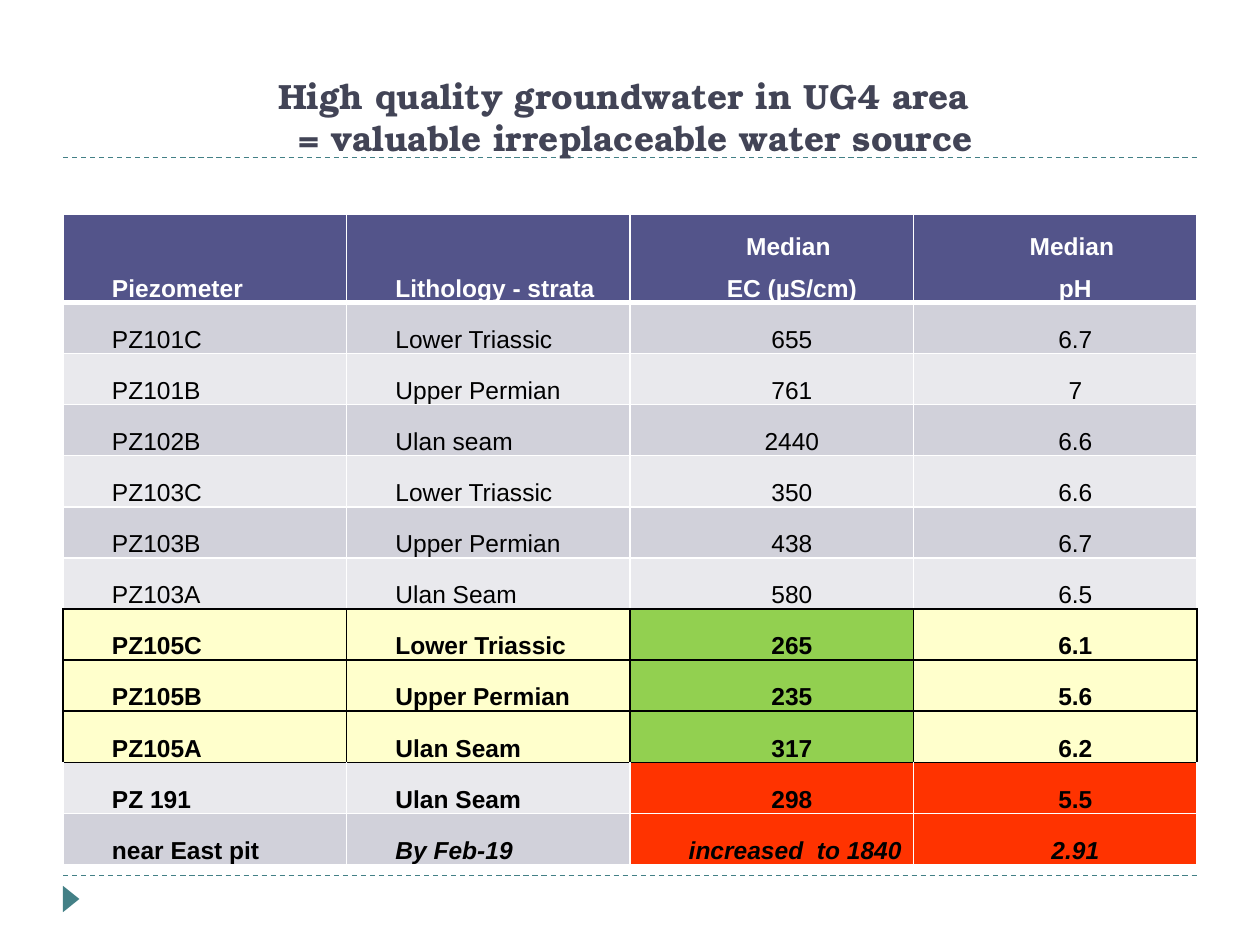
from pptx import Presentation
from pptx.dml.color import RGBColor as RGB
from pptx.enum.dml import MSO_LINE
from pptx.enum.shapes import MSO_CONNECTOR as CONN, MSO_SHAPE as SHAPE
from pptx.enum.text import MSO_ANCHOR as ANCHOR, PP_ALIGN as ALIGN
from pptx.oxml.ns import qn
from pptx.util import Pt
from lxml.etree import SubElement

TITLE = "High quality groundwater in UG4 area \v = valuable irreplaceable water source"
ROWS = [
    ("header", "Piezometer", "Lithology - strata", "Median \nEC (µS/cm)", "Median \npH"),
    ("plain", "PZ101C", "Lower Triassic", "655", "6.7"),
    ("plain", "PZ101B", "Upper Permian", "761", "7"),
    ("plain", "PZ102B", "Ulan seam", "2440", "6.6"),
    ("plain", "PZ103C", "Lower Triassic", "350", "6.6"),
    ("plain", "PZ103B", "Upper Permian", "438", "6.7"),
    ("plain", "PZ103A", "Ulan Seam", "580", "6.5"),
    ("fresh", "PZ105C", "Lower Triassic", "265", "6.1"),
    ("fresh", "PZ105B", "Upper Permian", "235", "5.6"),
    ("fresh", "PZ105A", "Ulan Seam", "317", "6.2"),
    ("alert", "PZ 191", "Ulan Seam", "298", "5.5"),
    ("alert", "near East pit", "By Feb-19", " increased  to 1840", "2.91"),
]
THEME = {
    "accent": "438086", "title": "424456", "white": "FFFFFF", "black": "000000",
    "header": "53548A", "bands": ("E9E9ED", "D1D1DA"), "yellow": "FFFFCC",
    "green": ("92D050", 50), "red": ("FF3300", 54),
    "title_font": "TeX Gyre Bonum", "body_font": "Arial",
    "title_size": 20, "body_size": 14,
}
LEFT, WIDTH = 36, 648
TABLE_TOP, ROW_H, INDENT = 122.4, 29.2, 23
RULES = (500.4, 90)


def set_all(target, values):
    for name, value in values.items():
        setattr(target, name, value)


def style_runs(p, color, **values):
    for r in p.runs:
        set_all(r.font, values)
        r.font.color.rgb = RGB.from_string(color)


def set_fill(cell, color):
    hex_color, alpha = color if isinstance(color, tuple) else (color, 100)
    cell.fill.solid()
    cell.fill.fore_color.rgb = RGB.from_string(hex_color)
    if alpha < 100:
        clr = cell.fill._xPr.find(".//" + qn("a:srgbClr"))
        SubElement(clr, qn("a:alpha"), val=str(alpha * 1000))


def set_border(cell, side, color, width):
    ln = SubElement(cell._tc.get_or_add_tcPr(), qn("a:ln" + side), w=str(Pt(width)))
    SubElement(SubElement(ln, qn("a:solidFill")), qn("a:srgbClr"), val=color)


def cell_fill(kind, row, col):
    if kind == "header":
        return THEME["header"]
    if kind == "fresh":
        return THEME["green"] if col == 2 else THEME["yellow"]
    if kind == "alert" and col >= 2:
        return THEME["red"]
    return THEME["bands"][row % 2]


def cell_borders(kind, row):
    side_color = THEME["black"] if kind == "fresh" else THEME["white"]
    borders = {side: (side_color, 1) for side in "LRTB"}
    if kind == "header":
        borders["B"] = (THEME["white"], 3)
    elif ROWS[row - 1][0] == "header":
        borders["T"] = (THEME["white"], 3)
    elif ROWS[row - 1][0] == "fresh":
        borders["T"] = (THEME["black"], 1)
    if row + 1 < len(ROWS) and ROWS[row + 1][0] == "fresh":
        borders["B"] = (THEME["black"], 1)
    return borders


def add_rule(s, y):
    line = s.shapes.add_connector(CONN.STRAIGHT, Pt(LEFT), Pt(y), Pt(LEFT + WIDTH), Pt(y))
    set_all(line.line, {"width": Pt(0.75), "dash_style": MSO_LINE.DASH})
    line.line.color.rgb = RGB.from_string(THEME["accent"])
    SubElement(line._element.spPr, qn("a:effectLst"))


def add_marker(s):
    sp = s.shapes.add_shape(SHAPE.ISOSCELES_TRIANGLE, Pt(33.1), Pt(509), Pt(15.1), Pt(9.4))
    sp.rotation = 90
    sp.shadow.inherit = False
    sp.fill.solid()
    sp.fill.fore_color.rgb = RGB.from_string(THEME["accent"])
    sp.line.fill.background()


def add_title(s):
    tf = s.shapes.add_textbox(Pt(LEFT), Pt(21.6), Pt(WIDTH), Pt(72.7)).text_frame
    set_all(tf, {"word_wrap": True, "vertical_anchor": ANCHOR.BOTTOM})
    p = tf.paragraphs[0]
    p.text = TITLE
    p.alignment = ALIGN.CENTER
    style_runs(p, THEME["title"], name=THEME["title_font"],
               size=Pt(THEME["title_size"]), bold=True)


def fill_cell(cell, kind, row, col, text):
    set_all(cell, {"vertical_anchor": ANCHOR.BOTTOM, "margin_left": Pt(5),
                   "margin_right": Pt(5), "margin_top": 0, "margin_bottom": 0})
    for side, (color, width) in cell_borders(kind, row).items():
        set_border(cell, side, color, width)
    set_fill(cell, cell_fill(kind, row, col))
    cell.text = text
    for p in cell.text_frame.paragraphs:
        set_all(p, {"line_spacing": 1.5,
                    "alignment": ALIGN.CENTER if col >= 2 else ALIGN.LEFT})
        p._p.get_or_add_pPr().set("indent", str(Pt(INDENT)))
        style_runs(p, THEME["white" if kind == "header" else "black"],
                   name=THEME["body_font"], size=Pt(THEME["body_size"]),
                   bold=kind != "plain",
                   italic=row == len(ROWS) - 1 and col > 0)


def add_readings(s):
    cols = len(ROWS[0]) - 1
    table = s.shapes.add_table(len(ROWS), cols, Pt(LEFT), Pt(TABLE_TOP),
                               Pt(WIDTH), Pt(ROW_H * len(ROWS))).table
    set_all(table, {"first_row": False, "horz_banding": False})
    for row, (kind, *texts) in enumerate(ROWS):
        table.rows[row].height = Pt(ROW_H)
        for col, text in enumerate(texts):
            fill_cell(table.cell(row, col), kind, row, col, text)


def main():
    prs = Presentation()
    set_all(prs, {"slide_width": Pt(720), "slide_height": Pt(540)})
    s = prs.slides.add_slide(prs.slide_layouts[6])
    for y in RULES:
        add_rule(s, y)
    add_marker(s)
    add_title(s)
    add_readings(s)
    prs.save("out.pptx")


if __name__ == "__main__":
    main()
